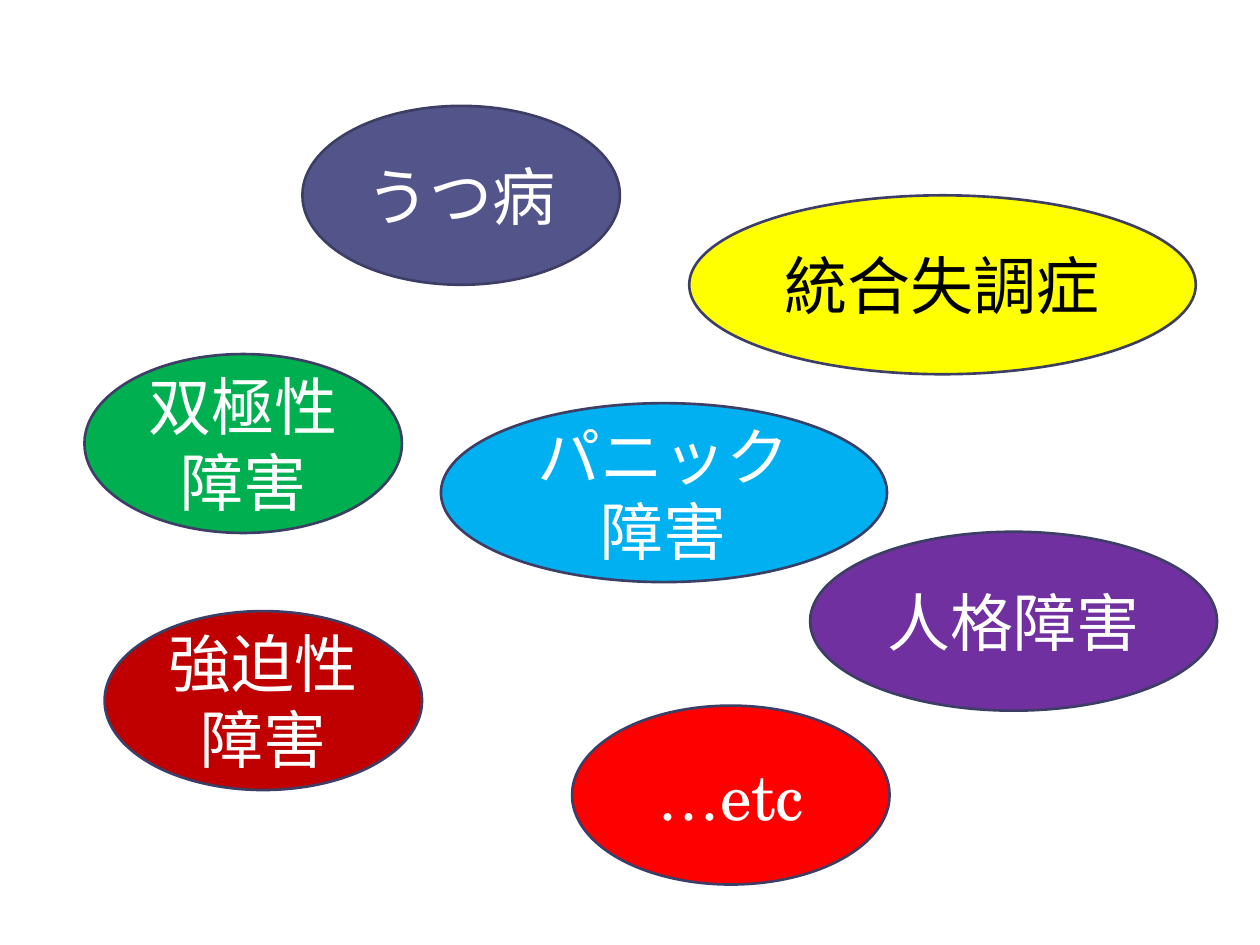
from pptx import Presentation
from pptx.dml.color import RGBColor
from pptx.enum.shapes import MSO_SHAPE
from pptx.enum.text import MSO_ANCHOR, PP_ALIGN
from pptx.util import Inches, Pt

ELLIPSE = MSO_SHAPE.OVAL
MIDDLE = MSO_ANCHOR.MIDDLE
CENTER = PP_ALIGN.CENTER

WHITE = RGBColor(0xFF, 0xFF, 0xFF)
BLACK = RGBColor(0x00, 0x00, 0x00)
OUTLINE = RGBColor(0x3D, 0x3E, 0x66)
INDIGO = RGBColor(0x53, 0x54, 0x8A)
GREEN = RGBColor(0x00, 0xB0, 0x50)
YELLOW = RGBColor(0xFF, 0xFF, 0x00)
DARK_RED = RGBColor(0xC0, 0x00, 0x00)
SKY_BLUE = RGBColor(0x00, 0xB0, 0xF0)
PURPLE = RGBColor(0x70, 0x30, 0xA0)
RED = RGBColor(0xFF, 0x00, 0x00)

WIDTH = 2.52
HEIGHT = 1.42

DISORDERS = [
    (["うつ病"], 2.4, 0.84, WIDTH, INDIGO, WHITE),
    (["双極性障害"], 0.67, 2.81, WIDTH, GREEN, WHITE),
    (["統合失調症"], 5.47, 1.55, 4.02, YELLOW, BLACK),
    (["強迫性障害"], 0.83, 4.85, WIDTH, DARK_RED, WHITE),
    (["パニック", "障害"], 3.5, 3.2, 3.54, SKY_BLUE, WHITE),
    (["人格障害"], 6.43, 4.22, 3.23, PURPLE, WHITE),
    (["…etc"], 4.54, 5.6, WIDTH, RED, WHITE),
]


class SlideBuilder:
    font_format = {"name": "TeX Gyre Schola", "size": Pt(36)}
    frame_format = {"word_wrap": True, "vertical_anchor": MIDDLE}

    def __init__(self, s):
        self.s = s

    def ellipse(self, lines, left, top, width, fill, color):
        sp = self.s.shapes.add_shape(
            ELLIPSE, Inches(left), Inches(top), Inches(width), Inches(HEIGHT))
        sp.shadow.inherit = False
        sp.fill.solid()
        sp.fill.fore_color.rgb = fill
        sp.line.color.rgb = OUTLINE
        sp.line.width = Pt(1.5)
        tf = sp.text_frame
        for name, value in self.frame_format.items():
            setattr(tf, name, value)
        for i, line in enumerate(lines):
            p = tf.add_paragraph() if i else tf.paragraphs[0]
            p.alignment = CENTER
            r = p.add_run()
            r.text = line
            for name, value in self.font_format.items():
                setattr(r.font, name, value)
            r.font.color.rgb = color


def main():
    prs = Presentation()
    prs.slide_width = Inches(10)
    prs.slide_height = Inches(7.5)
    builder = SlideBuilder(prs.slides.add_slide(prs.slide_layouts[6]))
    for disorder in DISORDERS:
        builder.ellipse(*disorder)
    prs.save("out.pptx")


if __name__ == "__main__":
    main()
